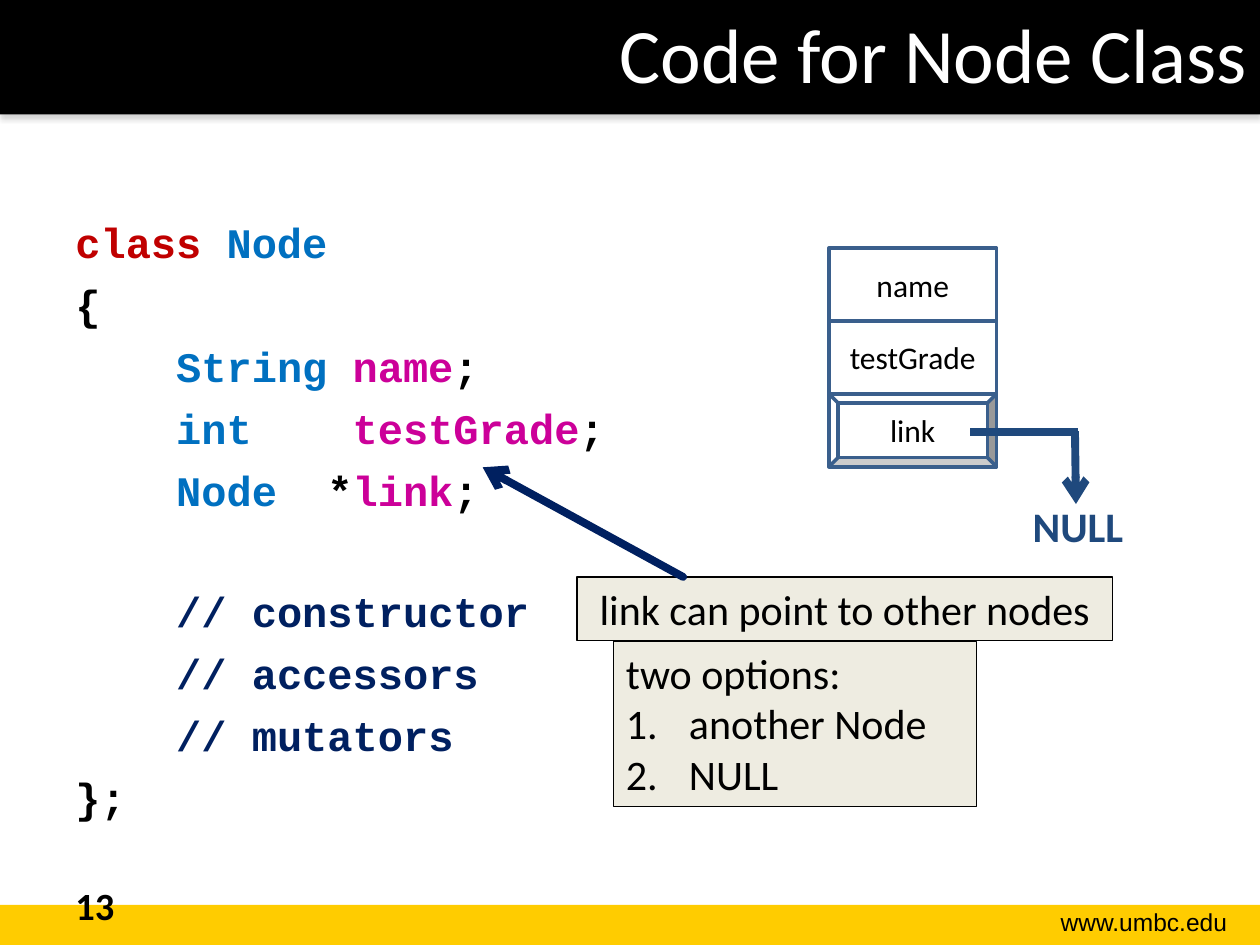
from lxml.etree import SubElement
from pptx import Presentation
from pptx.dml.color import RGBColor
from pptx.enum.shapes import MSO_CONNECTOR, MSO_SHAPE
from pptx.enum.text import MSO_ANCHOR, PP_ALIGN
from pptx.oxml.ns import qn
from pptx.util import Cm, Pt

BLACK, WHITE, NAVY, BLUE = "000000", "FFFFFF", "002060", "1F497D"
RED, TYPE, FIELD, CREAM, EDGE = "C00000", "0070C0", "CC0099", "EEECE1", "3A5F8C"


def paint(fmt, color):
    """Give a fill, or the fill of a line, one solid colour."""
    fmt.solid()
    fmt.fore_color.rgb = RGBColor.from_string(color)


def write(p, text, size=24, color=BLACK, bold=False, font="Calibri", align=None):
    """Add a formatted run to a paragraph."""
    if align is not None:
        p.alignment = align
    r = p.add_run()
    r.text = text
    r.font.size, r.font.bold, r.font.name = Pt(size), bold, font
    paint(r.font.fill, color)


prs = Presentation()
prs.slide_width, prs.slide_height = Cm(25.4), Cm(19.05)
s = prs.slides.add_slide(prs.slide_layouts[5])

# Footer and header bands
for top, height, color in [(18.24, 0.81, "FFCC00"), (0, 2.31, BLACK)]:
    band = s.shapes.add_shape(MSO_SHAPE.RECTANGLE, 0, Cm(top), Cm(25.4), Cm(height))
    band.shadow.inherit = False
    paint(band.fill, color)
    band.line.fill.background()

# Soft shadow under the header, the last band drawn
effects = band.element.spPr.find(qn("a:effectLst"))
shadow = SubElement(effects, qn("a:outerShdw"), blurRad=str(Pt(3.1)),
                    dist=str(Pt(1.8)), dir="5400000", rotWithShape="0")
tint = SubElement(shadow, qn("a:srgbClr"), val="808080")
SubElement(tint, qn("a:alpha"), val="35000")

# Title, raised above the header band
title = s.shapes.title
title.element.getparent().append(title.element)
title.left, title.top, title.width, title.height = Cm(2.54), 0, Cm(22.86), Cm(3.18)
title.text_frame.vertical_anchor = MSO_ANCHOR.TOP
write(title.text_frame.paragraphs[0], "Code for Node Class", size=44, color=WHITE,
      align=PP_ALIGN.RIGHT)

# Plain labels
labels = [
    ("www.umbc.edu", (19.94, 18.16, 5.05, 0.86),
     dict(size=14, font="Arial", align=PP_ALIGN.RIGHT)),
    ("13", (1.27, 17.65, 5.92, 1.02), dict(size=22, bold=True)),
    ("NULL", (19.76, 9.96, 3.94, 1.3),
     dict(color=BLUE, bold=True, align=PP_ALIGN.CENTER)),
]
for text, place, style in labels:
    tf = s.shapes.add_textbox(*map(Cm, place)).text_frame
    tf.word_wrap = True
    write(tf.paragraphs[0], text, **style)

# Code listing: one list of (text, colour) runs per line
code = [
    [("class ", RED), ("Node", TYPE)],
    [("{", BLACK)],
    [("    String ", TYPE), ("name", FIELD), (";", BLACK)],
    [("    int    ", TYPE), ("testGrade", FIELD), (";", BLACK)],
    [("    Node", TYPE), ("  *", BLACK), ("link", FIELD), (";", BLACK)],
    [("    // constructor", NAVY)],
    [("    // accessors", NAVY)],
    [("    // mutators", NAVY)],
    [("};", BLACK)],
]
tf = s.shapes.add_textbox(Cm(1.27), Cm(4.25), Cm(22.86), Cm(13)).text_frame
tf.word_wrap = True
for i, line in enumerate(code):
    p = tf.add_paragraph() if i else tf.paragraphs[0]
    if i:
        p.space_before = Pt(40.4 if "constructor" in line[0][0] else 6.6)
    for text, color in line:
        write(p, text, color=color, bold=True, font="Courier New")

# Node diagram, three equal cells
cells = [("name", MSO_SHAPE.RECTANGLE), ("testGrade", MSO_SHAPE.RECTANGLE),
         ("link", MSO_SHAPE.BEVEL)]
for i, (text, kind) in reversed(list(enumerate(cells))):
    cell = s.shapes.add_shape(kind, Cm(16.71), Cm(5 + 1.47 * i), Cm(3.38), Cm(1.47))
    cell.shadow.inherit = False
    paint(cell.fill, WHITE)
    paint(cell.line.fill, EDGE)
    cell.line.width = Pt(2)
    cell.text_frame.vertical_anchor = MSO_ANCHOR.MIDDLE
    write(cell.text_frame.paragraphs[0], text, size=18, align=PP_ALIGN.CENTER)

# Notes about the link; lines after the first are numbered
notes = [
    ((11.63, 11.63, 10.8, 1.28), PP_ALIGN.CENTER, ["link can point to other nodes"]),
    ((12.37, 12.93, 7.32, 3.33), PP_ALIGN.LEFT, ["two options:", "another Node", "NULL"]),
]
for place, align, lines in notes:
    note = s.shapes.add_shape(MSO_SHAPE.RECTANGLE, *map(Cm, place))
    note.shadow.inherit = False
    paint(note.fill, CREAM)
    paint(note.line.fill, BLACK)
    note.line.width = Pt(0.75)
    tf = note.text_frame
    tf.vertical_anchor = MSO_ANCHOR.TOP
    for i, text in enumerate(lines):
        p = tf.add_paragraph() if i else tf.paragraphs[0]
        if i:
            pPr = p._p.get_or_add_pPr()
            pPr.set("marL", str(Cm(1.27)))
            pPr.set("indent", str(-Cm(1.27)))
            SubElement(pPr, qn("a:buFont"), typeface="+mj-lt")
            SubElement(pPr, qn("a:buAutoNum"), type="arabicPeriod")
        write(p, text, align=align)

# Arrow from the note to the code, and the link pointer to NULL
lines = [
    ((13.77, 11.63, 9.73, 9.42), NAVY, "rnd", True),
    ((21.67, 8.69, 21.69, 10.16), BLUE, "flat", True),
    ((19.56, 8.71, 21.74, 8.71), BLUE, "flat", False),
]
for ends, color, cap, arrow in lines:
    line = s.shapes.add_connector(MSO_CONNECTOR.STRAIGHT, *map(Cm, ends))
    paint(line.line.fill, color)
    line.line.width = Pt(4.5)
    ln = line.element.spPr.find(qn("a:ln"))
    ln.set("cap", cap)
    if arrow:
        SubElement(ln, qn("a:tailEnd"), type="arrow")
    SubElement(line.element.spPr, qn("a:effectLst"))

prs.save("out.pptx")
